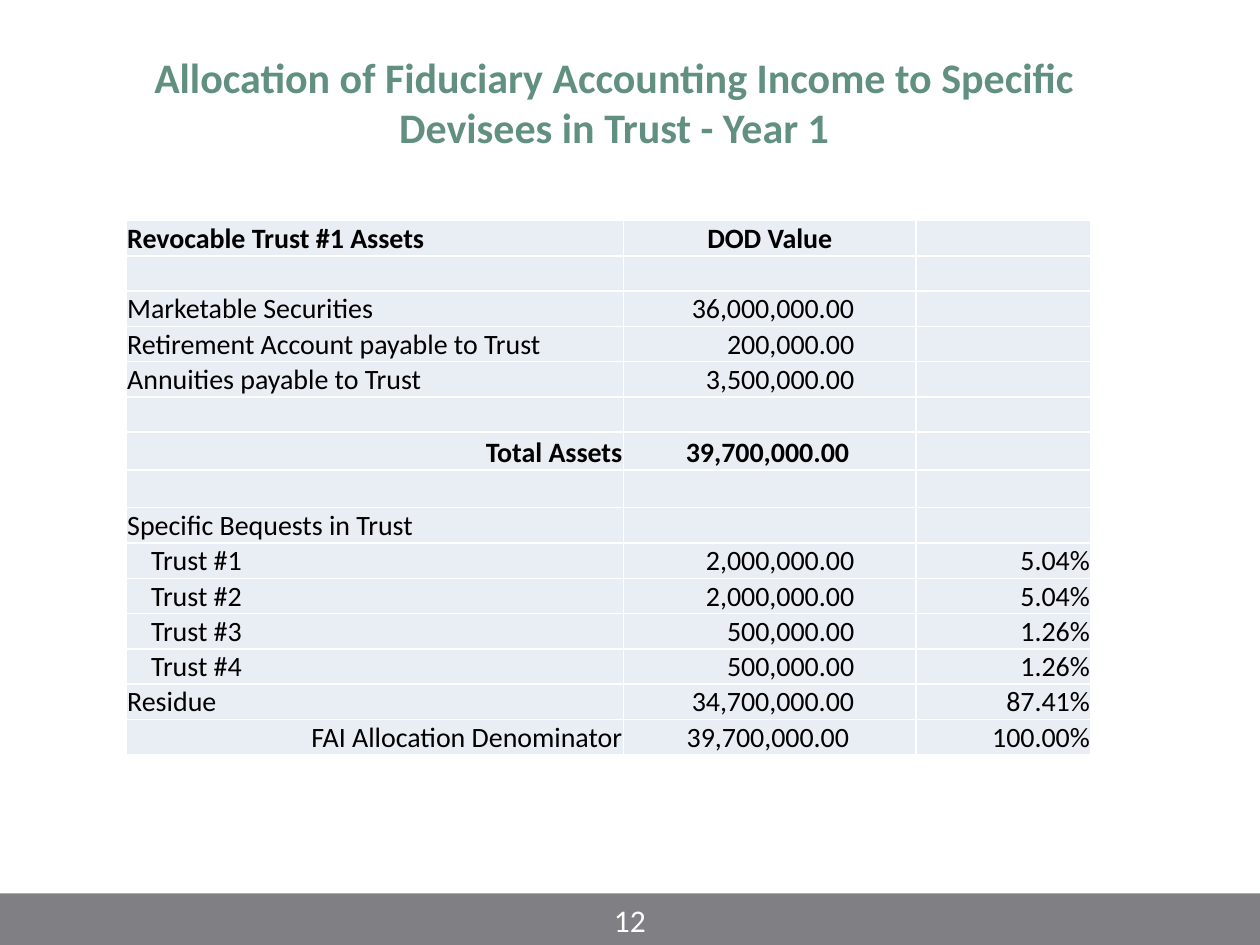
import pptx
import pptx.dml.color
import pptx.enum.shapes
import pptx.enum.text
import pptx.oxml.ns
import pptx.util
from lxml import etree
from pptx.util import Inches

FONT = "Calibri"
ALIGN = pptx.enum.text.PP_ALIGN
ANCHOR = pptx.enum.text.MSO_ANCHOR
BODY_SIZE = 16
COLUMN_WIDTHS = (3.95, 2.32, 1.39)
INDENT = 0.2
AMOUNT_MARGIN = 0.49
TOTAL_MARGIN = 0.53

# Row kind, followed by label, amount and share
ROWS = [
    ("header", "Revocable Trust #1 Assets", "DOD Value", ""),
    ("item", "", "", ""),
    ("item", "Marketable Securities", "36,000,000.00", ""),
    ("item", "Retirement Account payable to Trust", "200,000.00", ""),
    ("item", "Annuities payable to Trust", "3,500,000.00", ""),
    ("item", "", "", ""),
    ("bold total", "Total Assets", "39,700,000.00", ""),
    ("spacer", "", "", ""),
    ("item", "Specific Bequests in Trust", "", ""),
    ("indented", "Trust #1", "2,000,000.00", "5.04%"),
    ("indented", "Trust #2", "2,000,000.00", "5.04%"),
    ("indented", "Trust #3", "500,000.00", "1.26%"),
    ("indented", "Trust #4", "500,000.00", "1.26%"),
    ("item", "Residue", "34,700,000.00", "87.41%"),
    ("total", "FAI Allocation Denominator", "39,700,000.00", "100.00%"),
]
ROW_HEIGHTS = {"bold total": 0.3, "spacer": 0.3}


def color(hex_string):
    return pptx.dml.color.RGBColor.from_string(hex_string)


def add_run(paragraph, text, size, hex_string, bold=False):
    run = paragraph.add_run()
    run.text = text
    run.font.name = FONT
    run.font.size = pptx.util.Pt(size)
    run.font.bold = bold
    run.font.color.rgb = color(hex_string)


def add_centered_text(slide, box, text, size, hex_string, bold=False, anchor=ANCHOR.TOP):
    shape = slide.shapes.add_textbox(*map(Inches, box))
    frame = shape.text_frame
    frame.word_wrap = True
    frame.vertical_anchor = anchor
    paragraph = frame.paragraphs[0]
    paragraph.alignment = ALIGN.CENTER
    add_run(paragraph, text, size, hex_string, bold)


def add_title(slide, box):
    add_centered_text(
        slide, box,
        "Allocation of Fiduciary Accounting Income to Specific Devisees in Trust - Year 1",
        24, "629080", bold=True, anchor=ANCHOR.MIDDLE)


def add_footer(slide, box):
    left, top, width, height = box
    bar = slide.shapes.add_shape(
        pptx.enum.shapes.MSO_SHAPE.RECTANGLE, *map(Inches, box))
    bar.shadow.inherit = False
    bar.fill.solid()
    bar.fill.fore_color.rgb = color("807F83")
    bar.line.fill.background()
    number_width = 2.33
    number_box = (left + (width - number_width) / 2, top + 0.01, number_width, 0.4)
    add_centered_text(slide, number_box, "12", 18, "FFFFFF")


def add_cell_borders(cell, hex_string, points):
    properties = cell._tc.get_or_add_tcPr()
    qn = pptx.oxml.ns.qn
    for side in ("lnL", "lnR", "lnT", "lnB"):
        line = etree.SubElement(
            properties, qn(f"a:{side}"), w=str(pptx.util.Pt(points)))
        fill = etree.SubElement(line, qn("a:solidFill"))
        etree.SubElement(fill, qn("a:srgbClr"), val=hex_string)


def cell_layout(kind, column):
    """Return the alignment, left margin and right margin of a cell."""
    is_total = kind.endswith("total")
    if column == 0:
        left = INDENT if kind == "indented" else 0.01
        return (ALIGN.RIGHT if is_total else ALIGN.LEFT), left, 0.01
    if column == 1:
        if kind == "header":
            return ALIGN.CENTER, 0.01, 0.01
        return ALIGN.RIGHT, 0.01, TOTAL_MARGIN if is_total else AMOUNT_MARGIN
    return ALIGN.RIGHT, 0.01, 0.01


def fill_cell(cell, text, kind, column):
    alignment, left, right = cell_layout(kind, column)
    cell.margin_left, cell.margin_right = Inches(left), Inches(right)
    cell.margin_top, cell.margin_bottom = Inches(0.01), 0
    cell.vertical_anchor = ANCHOR.BOTTOM
    add_cell_borders(cell, "FFFFFF", 1)
    cell.fill.solid()
    cell.fill.fore_color.rgb = color("E9EDF4")
    paragraph = cell.text_frame.paragraphs[0]
    paragraph.alignment = alignment
    if text:
        add_run(paragraph, text, BODY_SIZE, "000000", kind in ("header", "bold total"))
    else:
        # An empty cell keeps the row height of the body text
        etree.SubElement(paragraph._p, pptx.oxml.ns.qn("a:endParaRPr"),
                         sz=str(BODY_SIZE * 100))


def add_allocation_table(slide, box):
    frame = slide.shapes.add_table(
        len(ROWS), len(COLUMN_WIDTHS), *map(Inches, box))
    table = frame.table
    table.first_row = False
    table.horz_banding = False
    for column, width in zip(table.columns, COLUMN_WIDTHS):
        column.width = Inches(width)
    for row, (kind, *texts) in zip(table.rows, ROWS):
        row.height = Inches(ROW_HEIGHTS.get(kind, 0.28))
        for column, (cell, text) in enumerate(zip(row.cells, texts)):
            fill_cell(cell, text, kind, column)


def main():
    presentation = pptx.Presentation()
    presentation.slide_width = Inches(10)
    presentation.slide_height = Inches(7.5)
    slide = presentation.slides.add_slide(presentation.slide_layouts[6])
    add_footer(slide, (0, 7.09, 10, 0.41))
    add_title(slide, (0.54, 0.33, 8.67, 0.95))
    add_allocation_table(slide, (1, 1.75, sum(COLUMN_WIDTHS), 4.24))
    presentation.save("out.pptx")


if __name__ == "__main__":
    main()
